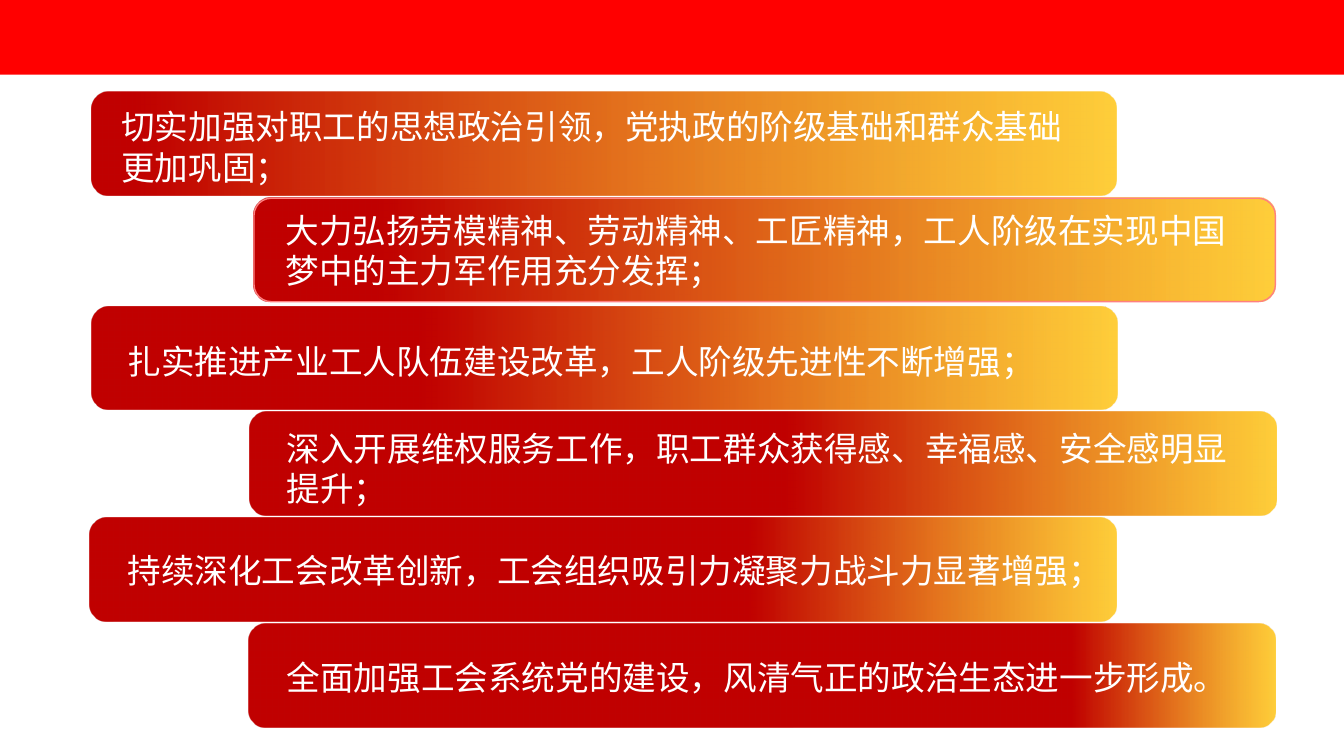
from pptx import Presentation
from pptx.dml.color import RGBColor
from pptx.enum.shapes import MSO_SHAPE
from pptx.enum.text import MSO_AUTO_SIZE
from pptx.oxml.ns import qn
from pptx.util import Pt
from lxml.etree import SubElement

EMU_PER_PX = 4572
SLIDE_WIDTH, SLIDE_HEIGHT = 2000, 1125
BAR_HEIGHT = 154
ONE_LINE, TWO_LINES = 80, 142

ACHIEVEMENTS = [
    ((136, 137, 1526), 4, None, (161, 148, 1488, TWO_LINES),
     "切实加强对职工的思想政治引领，党执政的阶级基础和群众基础\n更加巩固；"),
    ((378, 295, 1520), 12, "FF8080", (405, 302, 1458, TWO_LINES),
     "大力弘扬劳模精神、劳动精神、工匠精神，工人阶级在实现中国梦中的主力军作用充分发挥；"),
    ((136, 456, 1527), 32, None, (170, 498, 1488, ONE_LINE),
     "扎实推进产业工人队伍建设改革，工人阶级先进性不断增强；"),
    ((371, 613, 1528), 52, None, (407, 627, 1456, TWO_LINES),
     "深入开展维权服务工作，职工群众获得感、幸福感、安全感明显提升；"),
    ((133, 771, 1529), 64, None, (170, 809, 1470, ONE_LINE),
     "持续深化工会改革创新，工会组织吸引力凝聚力战斗力显著增强；"),
    ((370, 928, 1528), 80, None, (407, 968, 1466, ONE_LINE),
     "全面加强工会系统党的建设，风清气正的政治生态进一步形成。"),
]


def px(*lengths):
    return [length * EMU_PER_PX for length in lengths]


def color(hex_code):
    return RGBColor.from_string(hex_code)


def add_block(slide, preset, box, outline=None):
    block = slide.shapes.add_shape(preset, *px(*box))
    block.shadow.inherit = False
    if outline:
        block.line.color.rgb = color(outline)
        block.line.width = Pt(0.75)
    else:
        block.line.fill.background()
    return block


def add_header(slide):
    header = add_block(slide, MSO_SHAPE.RECTANGLE, (0, 0, SLIDE_WIDTH, 111))
    header.fill.solid()
    header.fill.fore_color.rgb = color("FF0000")


def add_gradient_bar(slide, box, red_percent, outline):
    bar = add_block(slide, MSO_SHAPE.ROUNDED_RECTANGLE, box, outline)
    bar.fill.gradient()
    bar.fill.gradient_angle = 0
    red, gold = bar.fill.gradient_stops
    red.color.rgb = color("C00000")
    red.position = red_percent / 100
    gold.color.rgb = color("FFC000")
    gold.position = 1
    gold_color = list(bar.element.iter(qn("a:gs")))[-1][0]
    SubElement(gold_color, qn("a:alpha"), val="77000")


def add_text(slide, text, box, size=18, font="Arial", ink="FFFFFF"):
    frame = slide.shapes.add_textbox(*px(*box)).text_frame
    frame.word_wrap = True
    frame.auto_size = MSO_AUTO_SIZE.SHAPE_TO_FIT_TEXT
    frame.text = text
    for paragraph in frame.paragraphs:
        for run in paragraph.runs:
            run.font.size = Pt(size)
            run.font.name = font
            run.font.color.rgb = color(ink)


def main():
    deck = Presentation()
    deck.slide_width, deck.slide_height = px(SLIDE_WIDTH, SLIDE_HEIGHT)
    slide = deck.slides.add_slide(deck.slide_layouts[6])
    add_header(slide)
    for (left, top, width), red_percent, outline, text_box, text in ACHIEVEMENTS:
        add_gradient_bar(slide, (left, top, width, BAR_HEIGHT), red_percent, outline)
        add_text(slide, text, text_box)
    deck.save("out.pptx")


if __name__ == "__main__":
    main()
